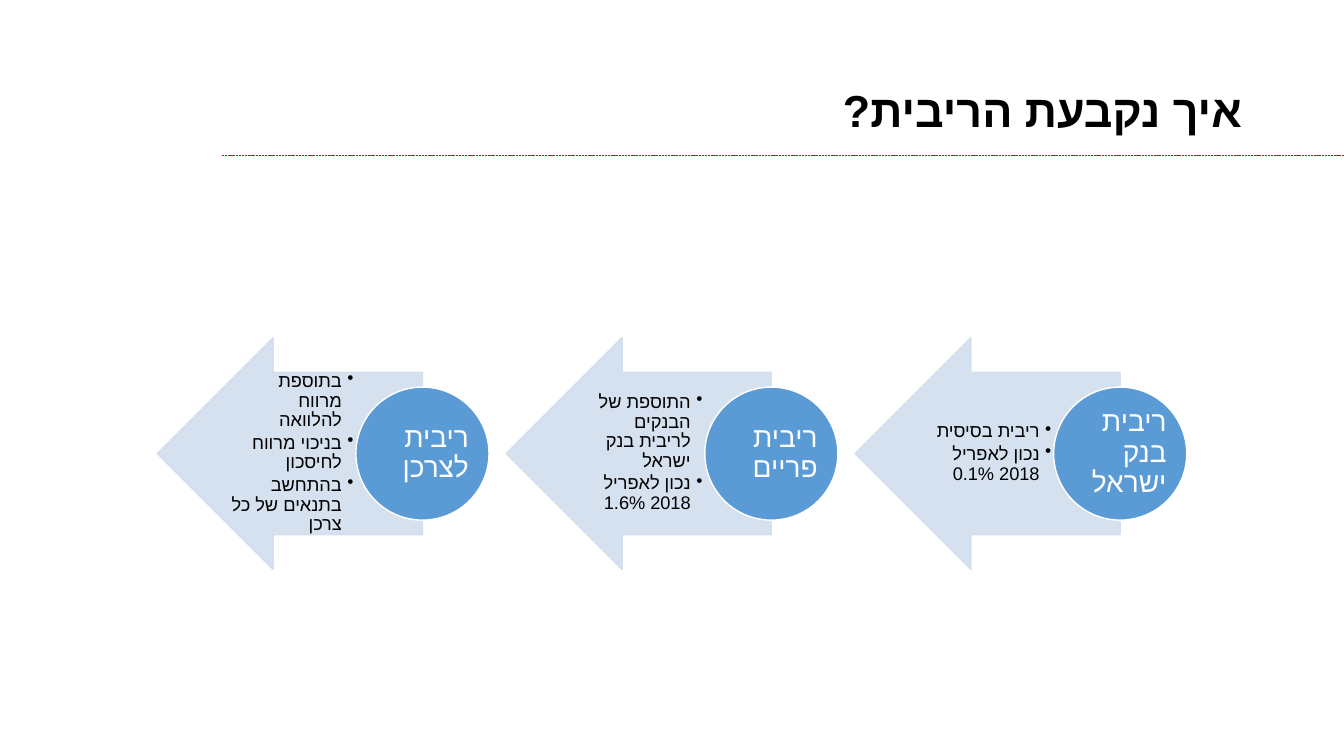
from lxml import etree
from pptx import Presentation
from pptx.dml.color import RGBColor
from pptx.enum import dml, lang, shapes, text
from pptx.oxml.ns import qn
from pptx.util import Inches, Pt

BLACK = RGBColor(0x00, 0x00, 0x00)
WHITE = RGBColor(0xFF, 0xFF, 0xFF)
RED = RGBColor(0xB0, 0x1A, 0x1A)
BLUE = RGBColor(0x5B, 0x9B, 0xD5)
PALE_BLUE = RGBColor(0xD2, 0xDE, 0xEF)

presentation = Presentation()
presentation.slide_width = Inches(13.33)
presentation.slide_height = Inches(7.5)
slide = presentation.slides.add_slide(presentation.slide_layouts[6])


def add_hebrew_text(left, top, width, height, lines, size, color,
                    insets=(0.01, 0.01, 0.01, 0.01), bold=False, bullets=False, space_after=0):
    """Add a right-to-left text box with one paragraph per line."""
    box = slide.shapes.add_textbox(Inches(left), Inches(top), Inches(width), Inches(height))
    frame = box.text_frame
    frame.word_wrap = True
    frame.vertical_anchor = text.MSO_ANCHOR.MIDDLE
    frame.margin_left, frame.margin_top, frame.margin_right, frame.margin_bottom = map(Inches, insets)
    for index, line in enumerate(lines):
        paragraph = frame.paragraphs[0] if index == 0 else frame.add_paragraph()
        properties = paragraph._p.get_or_add_pPr()
        properties.set("rtl", "1")
        if bullets:
            properties.set("lvl", "1")
            properties.set("marL", str(Inches(0.12)))
            properties.set("indent", str(Inches(-0.12)))
            etree.SubElement(properties, qn("a:buChar")).set("char", "•")
        paragraph.alignment = text.PP_ALIGN.RIGHT
        paragraph.line_spacing = 0.9
        paragraph.space_after = Pt(space_after)
        run = paragraph.add_run()
        run.text = line
        run.font.size = Pt(size)
        run.font.bold = bold
        run.font.name = "Arial"
        run.font.color.rgb = color
        run.font.language_id = lang.MSO_LANGUAGE_ID.HEBREW
        etree.SubElement(run.font._element, qn("a:cs")).set("typeface", "Arial")


def add_filled_shape(kind, left, top, width, height, fill, line, opacity=100):
    """Add a preset shape with a solid fill and a 1 pt outline."""
    shape = slide.shapes.add_shape(kind, Inches(left), Inches(top), Inches(width), Inches(height))
    shape.shadow.inherit = False
    shape.fill.solid()
    shape.fill.fore_color.rgb = fill
    shape.line.color.rgb = line
    shape.line.width = Pt(1)
    if opacity < 100:
        for color in shape._element.spPr.iter(qn("a:srgbClr")):
            etree.SubElement(color, qn("a:alpha")).set("val", str(opacity * 1000))
    return shape


# Title and the dashed rule below it
rule = slide.shapes.add_connector(shapes.MSO_CONNECTOR.STRAIGHT,
                                  Inches(2.2), Inches(1.54), Inches(13.33), Inches(1.54))
rule.line.color.rgb = RED
rule.line.width = Pt(0.5)
rule.line.dash_style = dml.MSO_LINE.SQUARE_DOT
etree.SubElement(rule._element.spPr, qn("a:effectLst"))
add_hebrew_text(0.92, 0.4, 11.5, 1.45, ["איך נקבעת הריבית?"], 32, BLACK,
                insets=(0.1, 0.05, 0.1, 0.05), bold=True)

# Steps, from right to left: circle label and arrow bullets
steps = [
    ("ריבית בנק ישראל", ["ריבית בסיסית", "נכון לאפריל 2018 0.1%"]),
    ("ריבית פריים", ["התוספת של הבנקים לריבית בנק ישראל", "נכון לאפריל 2018 1.6%"]),
    ("ריבית לצרכן", ["בתוספת מרווח להלוואה", "בניכוי מרווח לחיסכון", "בהתחשב בתנאים של כל צרכן"]),
]
FIRST_LEFT, STEP_PITCH = 8.48, 3.46

for index, (label, details) in enumerate(steps):
    left = FIRST_LEFT - index * STEP_PITCH
    arrow = add_filled_shape(shapes.MSO_SHAPE.LEFT_ARROW, left, 3.35, 2.63, 2.3,
                             PALE_BLUE, PALE_BLUE, opacity=90)
    arrow.adjustments[0] = 0.7
    arrow.adjustments[1] = 0.5
    add_hebrew_text(left + 0.69, 3.69, 1.28, 1.61, details, 13, BLACK,
                    insets=(0.04, 0.01, 0.02, 0.01), bullets=True, space_after=2)
    add_filled_shape(shapes.MSO_SHAPE.OVAL, left + 1.97, 3.84, 1.32, 1.32, BLUE, WHITE)
    add_hebrew_text(left + 2.17, 4.03, 0.93, 0.93, [label], 20, WHITE)

presentation.save("out.pptx")
